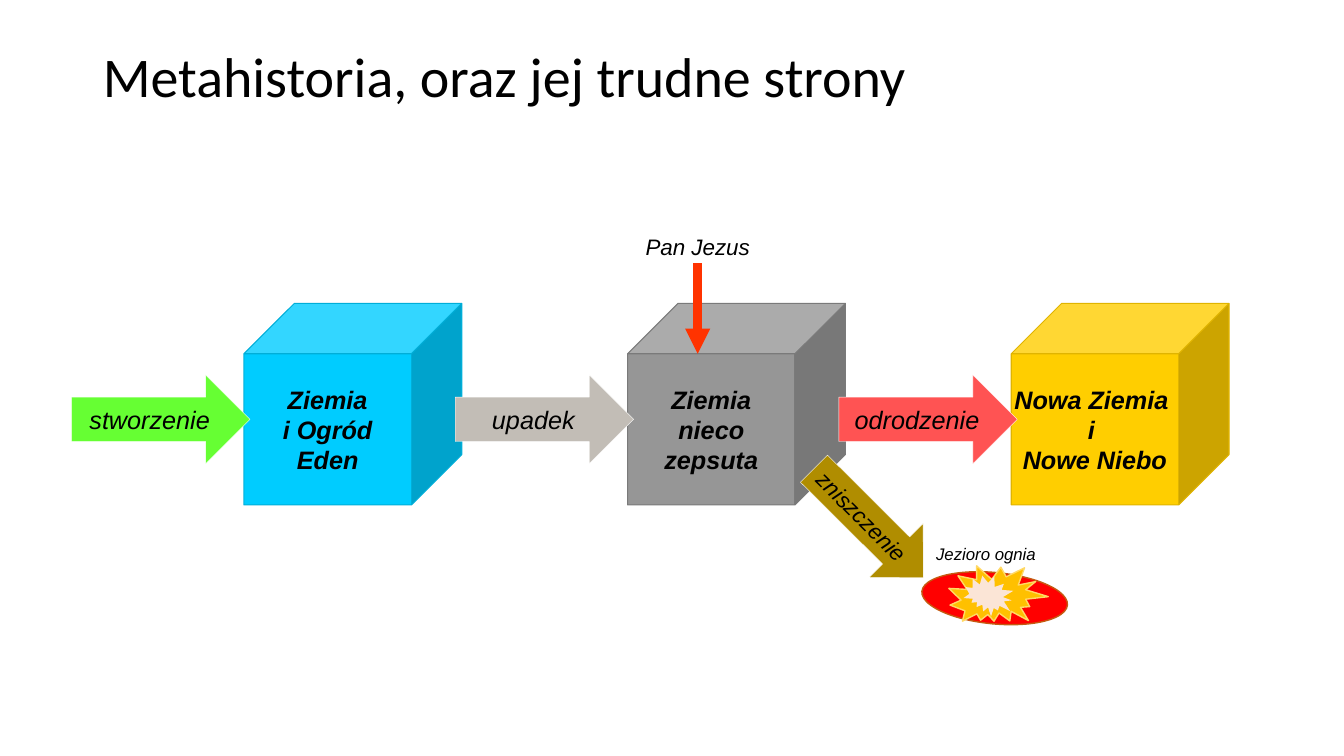
"""Build the slide on metahistory: three worlds and the passages between them."""
from lxml import etree
from pptx import Presentation
from pptx.dml.color import RGBColor
from pptx.enum.shapes import MSO_CONNECTOR as Connector, MSO_SHAPE as Shape
from pptx.enum.text import MSO_ANCHOR as Anchor, PP_ALIGN as Align
from pptx.oxml.ns import qn
from pptx.util import Inches, Pt

TITLE = "Metahistoria, oraz jej trudne strony"
WORLDS = [
    (["Ziemia", "i Ogród\nEden"], "00CCFF", "00AED8"),
    (["Ziemia\nnieco\nzepsuta"], "969696", "7A7A7A"),
    (["Nowa Ziemia ", "i ", "Nowe Niebo"], "FFCE00", "E0B400"),
]
PASSAGES = [("stworzenie", "66FF33"), ("upadek", "C2BDB6"), ("odrodzenie", "FF5353")]
FIRE = [
    (Shape.FLOWCHART_CONNECTOR, (9.14, 5.68, 1.45, 0.51), 5.4, "FF0000", "C55A11"),
    (Shape.EXPLOSION2, (9.41, 5.57, 0.97, 0.68), 16.2, "FFC000", "FFD966"),
    (Shape.EXPLOSION2, (9.58, 5.69, 0.47, 0.45), 56.2, "FBE5D6", None),
]
STEP = 3.805
WORLD_LEFT, WORLD_TOP, WORLD_WIDTH, WORLD_HEIGHT = 2.42, 3.01, 2.16, 2
PASSAGE_LEFT, PASSAGE_TOP, PASSAGE_WIDTH, PASSAGE_HEIGHT = 0.71, 3.72, 1.77, 0.88


def color(value):
    return RGBColor.from_string(value)


def inches(lengths):
    return [Inches(length) for length in lengths]


def write(shape, lines, size, bold=False, wrap=False):
    frame = shape.text_frame
    frame.word_wrap = wrap
    frame.vertical_anchor = Anchor.MIDDLE
    for index, line in enumerate(lines):
        para = frame.add_paragraph() if index else frame.paragraphs[0]
        para.text = line
        para.alignment = Align.CENTER
        font = para.font
        font.name, font.size, font.bold, font.italic = "Arial", Pt(size), bold, True
        font.color.rgb = color("000000")


def add_figure(slide, kind, place, fill, line, weight, turn=0):
    figure = slide.shapes.add_shape(kind, *inches(place))
    figure.shadow.inherit = False
    figure.rotation = turn
    figure.fill.solid()
    figure.fill.fore_color.rgb = color(fill)
    if line:
        figure.line.color.rgb = color(line)
        figure.line.width = Pt(weight)
    else:
        figure.line.fill.background()
    return figure


def add_label(slide, text, place, size):
    label = slide.shapes.add_textbox(*inches(place))
    frame = label.text_frame
    frame.margin_left = frame.margin_right = Inches(0.03)
    frame.margin_top = frame.margin_bottom = Inches(0.03)
    write(label, [text], size, wrap=True)
    return label


def add_title(slide):
    title = slide.shapes.title
    title.left, title.top, title.width, title.height = inches((0.92, 0.4, 11.5, 0.78))
    title.text_frame.vertical_anchor = Anchor.MIDDLE
    para = title.text_frame.paragraphs[0]
    para.text = TITLE
    para.alignment = Align.LEFT
    para.line_spacing = 0.9
    para.font.name, para.font.size = "Calibri", Pt(40)
    para.font.color.rgb = color("000000")


def add_arrival(slide):
    label = add_label(slide, "Pan Jezus", (6.2, 2.29, 1.44, 0.32), 16)
    arrow = slide.shapes.add_connector(Connector.STRAIGHT, *inches((6.92, 2.61, 6.92, 3.51)))
    arrow.begin_connect(label, 2)
    arrow.line.color.rgb = color("FF3300")
    arrow.line.width = Pt(6)
    etree.SubElement(arrow.line._get_or_add_ln(), qn("a:tailEnd"), type="triangle")
    etree.SubElement(arrow._element.spPr, qn("a:effectLst"))


def main():
    deck = Presentation()
    deck.slide_width, deck.slide_height = inches((13.33, 7.5))
    slide = deck.slides.add_slide(deck.slide_layouts[5])
    add_title(slide)
    for column, (lines, fill, edge) in enumerate(WORLDS):
        place = (WORLD_LEFT + column * STEP, WORLD_TOP, WORLD_WIDTH, WORLD_HEIGHT)
        cube = add_figure(slide, Shape.CUBE, place, fill, edge, 0.75)
        write(cube, lines, 18, bold=True)
    for column, (name, fill) in enumerate(PASSAGES):
        place = (PASSAGE_LEFT + column * STEP, PASSAGE_TOP, PASSAGE_WIDTH, PASSAGE_HEIGHT)
        write(add_figure(slide, Shape.RIGHT_ARROW, place, fill, "FFFFFF", 0.25), [name], 18)
    ruin = add_figure(slide, Shape.RIGHT_ARROW, (7.85, 4.81, 1.53, 0.76), "B08D00", "FFFFFF", 0.25, 44.9)
    write(ruin, ["zniszczenie"], 16)
    add_arrival(slide)
    add_label(slide, "Jezioro ognia", (9.06, 5.36, 1.44, 0.26), 12)
    for kind, place, turn, fill, edge in FIRE:
        add_figure(slide, kind, place, fill, edge, 1, turn)
    deck.save("out.pptx")


if __name__ == "__main__":
    main()
